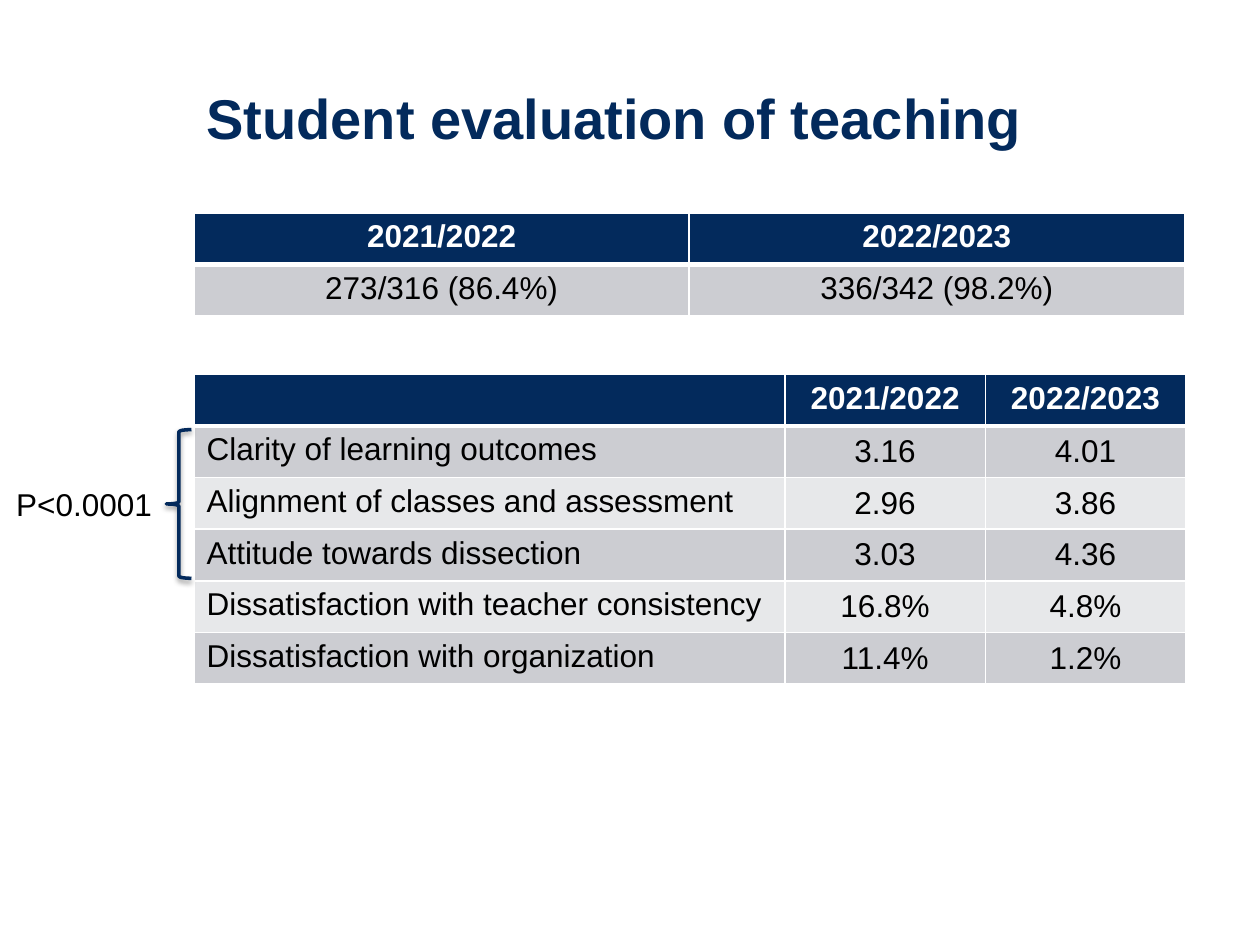
import pptx
import pptx.util
import pptx.oxml
import pptx.dml.color
import pptx.enum.shapes
import pptx.enum.text
from dataclasses import dataclass

Inches = pptx.util.Inches
Pt = pptx.util.Pt
Align = pptx.enum.text.PP_ALIGN
Anchor = pptx.enum.text.MSO_ANCHOR
NS = 'xmlns:a="http://schemas.openxmlformats.org/drawingml/2006/main"'

TITLE = "Student evaluation of teaching"
P_VALUE = "P<0.0001"
RESPONSES = [
    ("2021/2022", "2022/2023"),
    ("273/316 (86.4%)", "336/342 (98.2%)"),
]
SCORES = [
    ("", "2021/2022", "2022/2023"),
    ("Clarity of learning outcomes", "3.16", "4.01"),
    ("Alignment of classes and assessment", "2.96", "3.86"),
    ("Attitude towards dissection", "3.03", "4.36"),
    ("Dissatisfaction with teacher consistency", "16.8%", "4.8%"),
    ("Dissatisfaction with organization", "11.4%", "1.2%"),
]
LEFT = 1.54
ROW_HEIGHT = 0.41


@dataclass(frozen=True)
class Theme:
    font: str = "Arial"
    navy: str = "032A5C"
    white: str = "FFFFFF"
    black: str = "000000"
    bands: tuple = ("CCCDD2", "E7E8EA")
    title_size: int = 32
    body_size: int = 18
    thin: int = 1
    thick: int = 3


theme = Theme()


def rgb(value):
    return pptx.dml.color.RGBColor.from_string(value)


def write(tf, text, *, size=theme.body_size, color=theme.black, bold=False,
          align=Align.LEFT):
    p = tf.paragraphs[0]
    p.alignment = align
    if text:
        r = p.add_run()
        r.text = text
        font = r.font
    else:
        font = p.font
    font.name = theme.font
    font.size = Pt(size)
    font.bold = bold
    font.color.rgb = rgb(color)


def add_text(s, at, text, wrap=True, **fmt):
    sp = s.shapes.add_textbox(*map(Inches, at))
    tf = sp.text_frame
    tf.word_wrap = wrap
    tf.vertical_anchor = Anchor.MIDDLE
    write(tf, text, **fmt)


def set_borders(cell, top, bottom):
    widths = {"L": theme.thin, "R": theme.thin, "T": top, "B": bottom}
    tcPr = cell._tc.get_or_add_tcPr()
    for i, (side, width) in enumerate(widths.items()):
        tcPr.insert(i, pptx.oxml.parse_xml(
            f'<a:ln{side} {NS} w="{Pt(width)}"><a:solidFill>'
            f'<a:srgbClr val="{theme.white}"/></a:solidFill></a:ln{side}>'))


def add_table(s, top, rows, widths, label_column=False):
    table = s.shapes.add_table(
        len(rows), len(widths), Inches(LEFT), Inches(top),
        Inches(sum(widths)), Inches(ROW_HEIGHT * len(rows))).table
    for column, width in zip(table.columns, widths):
        column.width = Inches(width)
    for i, row in enumerate(rows):
        table.rows[i].height = Inches(ROW_HEIGHT)
        header = i == 0
        for j, text in enumerate(row):
            cell = table.cell(i, j)
            label = label_column and j == 0
            cell.fill.solid()
            cell.fill.fore_color.rgb = rgb(
                theme.navy if header else theme.bands[(i - 1) % 2])
            set_borders(cell, theme.thick if i == 1 else theme.thin,
                        theme.thick if header else theme.thin)
            middle = label_column and not header and not label
            cell.vertical_anchor = Anchor.MIDDLE if middle else Anchor.TOP
            write(cell.text_frame, text, bold=header,
                  color=theme.white if header else theme.black,
                  align=Align.LEFT if label else Align.CENTER)


def add_brace(s, at):
    sp = s.shapes.add_shape(
        pptx.enum.shapes.MSO_SHAPE.LEFT_BRACE, *map(Inches, at))
    sp.fill.background()
    sp.line.color.rgb = rgb(theme.navy)
    sp.line.width = Pt(2)
    sp.shadow.inherit = False
    effects = sp._element.spPr.find(pptx.oxml.ns.qn("a:effectLst"))
    effects.append(pptx.oxml.parse_xml(
        f'<a:outerShdw {NS} blurRad="{Pt(3.1)}" dist="{Pt(1.6)}" '
        f'dir="5400000" rotWithShape="0"><a:srgbClr val="{theme.black}">'
        '<a:alpha val="38000"/></a:srgbClr></a:outerShdw>'))


def main():
    prs = pptx.Presentation()
    prs.slide_width, prs.slide_height = Inches(10), Inches(7.5)
    s = prs.slides.add_slide(prs.slide_layouts[6])
    add_text(s, (LEFT, 0.61, 7.96, 0.64), TITLE,
             size=theme.title_size, color=theme.navy, bold=True)
    add_table(s, 2.97, SCORES, (4.69, 1.59, 1.59), label_column=True)
    add_text(s, (0.03, 3.5, 1.29, 1), P_VALUE, wrap=False)
    add_brace(s, (1.32, 3.41, 0.2, 1.18))
    add_table(s, 1.69, RESPONSES, (3.93, 3.93))
    prs.save("out.pptx")


if __name__ == "__main__":
    main()
